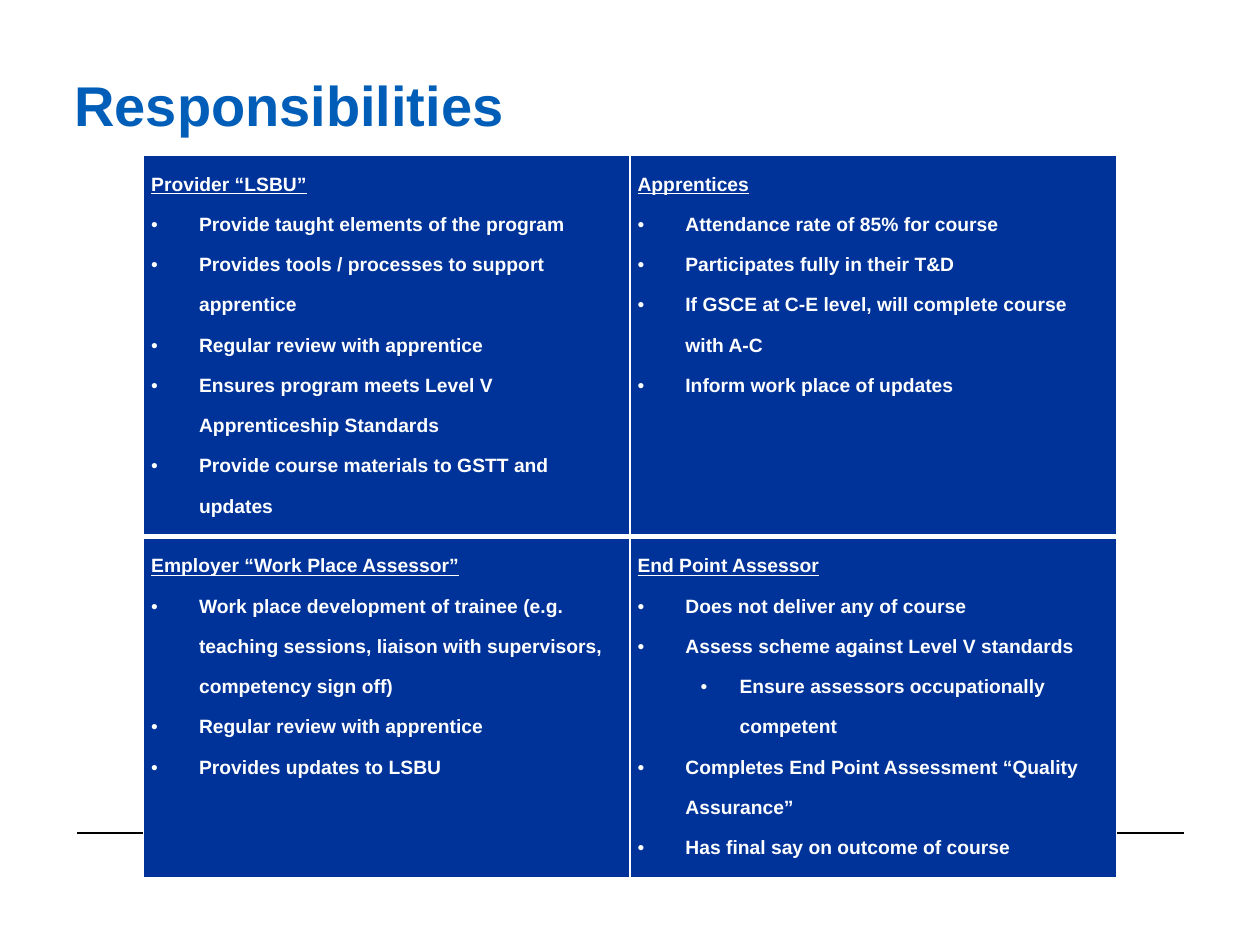
from lxml import etree
from pptx import Presentation
from pptx.dml.color import RGBColor
from pptx.enum import shapes, text
from pptx.oxml import ns
from pptx.util import Inches, Pt

COLOURS = {"title": "005EB8", "cell": "003399", "white": "FFFFFF", "rule": "000000"}
FONT = "Arial"
ROW_HEIGHTS = [3.03, 2.71]
COLUMN_WIDTH = 3.86
# Left margin and hanging indent of each bullet level, in inches
INDENTS = [(0.38, 0.38), (0.81, 0.31)]

# Each cell: heading, then (level, bullet text)
RESPONSIBILITIES = [
    [
        ("Provider “LSBU”", [
            (0, "Provide taught elements of the program"),
            (0, "Provides tools / processes to support apprentice"),
            (0, "Regular review with apprentice"),
            (0, "Ensures program meets Level V Apprenticeship Standards"),
            (0, "Provide course materials to GSTT and updates"),
        ]),
        ("Apprentices", [
            (0, "Attendance rate of 85% for course"),
            (0, "Participates fully in their T&D"),
            (0, "If GSCE at C-E level, will complete course with A-C"),
            (0, "Inform work place of updates"),
        ]),
    ],
    [
        ("Employer “Work Place Assessor”", [
            (0, "Work place development of trainee (e.g. teaching sessions, "
                "liaison with supervisors, competency sign off)"),
            (0, "Regular review with apprentice"),
            (0, "Provides updates to LSBU"),
        ]),
        ("End Point Assessor", [
            (0, "Does not deliver any of course"),
            (0, "Assess scheme against Level V standards"),
            (1, "Ensure assessors occupationally competent"),
            (0, "Completes End Point Assessment “Quality Assurance”"),
            (0, "Has final say on outcome of course"),
        ]),
    ],
]


def colour(name):
    return RGBColor.from_string(COLOURS[name])


def style_font(font, size, colour_name, underline=False):
    font.name, font.size, font.bold = FONT, Pt(size), True
    font.underline = underline
    font.color.rgb = colour(colour_name)


def add_footer_rule(page):
    rule = page.shapes.add_connector(
        shapes.MSO_CONNECTOR.STRAIGHT,
        Inches(0.61), Inches(6.61), Inches(9.4), Inches(6.61))
    rule.line.color.rgb = colour("rule")
    rule.line.width = Pt(1.25)
    etree.SubElement(rule._element.spPr, ns.qn("a:effectLst"))


def set_title(page, wording):
    title = page.shapes.title
    title.left, title.top = Inches(0.59), Inches(0.59)
    title.width, title.height = Inches(8.82), Inches(0.98)
    frame = title.text_frame
    frame.margin_left = frame.margin_right = 0
    frame.margin_top = frame.margin_bottom = 0
    frame.vertical_anchor = text.MSO_ANCHOR.TOP
    frame.auto_size = text.MSO_AUTO_SIZE.NONE
    para = frame.paragraphs[0]
    para.text = wording
    para.alignment = text.PP_ALIGN.LEFT
    para.line_spacing = Pt(36)
    style_font(para.font, 32, "title")


def set_bullet(para, level):
    margin, hanging = INDENTS[level]
    para.level = level
    properties = para._p.get_or_add_pPr()
    properties.set("marL", str(Inches(margin)))
    properties.set("indent", str(-Inches(hanging)))
    etree.SubElement(properties, ns.qn("a:buFont"), typeface=FONT)
    etree.SubElement(properties, ns.qn("a:buChar"), char="•")


def set_borders(cell, widths):
    properties = cell._tc.get_or_add_tcPr()
    for position, (side, width) in enumerate(widths.items()):
        line = etree.Element(ns.qn(f"a:ln{side}"), w=str(Pt(width)))
        fill = etree.SubElement(line, ns.qn("a:solidFill"))
        etree.SubElement(fill, ns.qn("a:srgbClr"), val=COLOURS["white"])
        properties.insert(position, line)


def fill_cell(cell, heading, bullets):
    cell.margin_left = cell.margin_right = Inches(0.06)
    cell.margin_top = cell.margin_bottom = 0
    cell.fill.solid()
    cell.fill.fore_color.rgb = colour("cell")
    frame = cell.text_frame
    para = frame.paragraphs[0]
    para.text = heading
    para.line_spacing = Pt(23)
    style_font(para.font, 11, "white", underline=True)
    for level, wording in bullets:
        para = frame.add_paragraph()
        para.text = wording
        set_bullet(para, level)
        para.line_spacing = Pt(23)
        style_font(para.font, 11, "white")


def add_responsibility_table(page):
    table = page.shapes.add_table(
        2, 2, Inches(1.14), Inches(1.23),
        Inches(2 * COLUMN_WIDTH), Inches(sum(ROW_HEIGHTS))).table
    table.first_row = table.horz_banding = False
    for column in table.columns:
        column.width = Inches(COLUMN_WIDTH)
    for row_index, cells in enumerate(RESPONSIBILITIES):
        table.rows[row_index].height = Inches(ROW_HEIGHTS[row_index])
        # The divider between the two rows is thicker
        top, bottom = (1, 3) if row_index == 0 else (3, 1)
        for column_index, (heading, bullets) in enumerate(cells):
            cell = table.cell(row_index, column_index)
            fill_cell(cell, heading, bullets)
            set_borders(cell, {"L": 1, "R": 1, "T": top, "B": bottom})


def main():
    deck = Presentation()
    deck.slide_width, deck.slide_height = Inches(10), Inches(7.5)
    page = deck.slides.add_slide(deck.slide_layouts.get_by_name("Title Only"))
    add_footer_rule(page)
    set_title(page, "Responsibilities")
    add_responsibility_table(page)
    deck.save("out.pptx")


if __name__ == "__main__":
    main()
